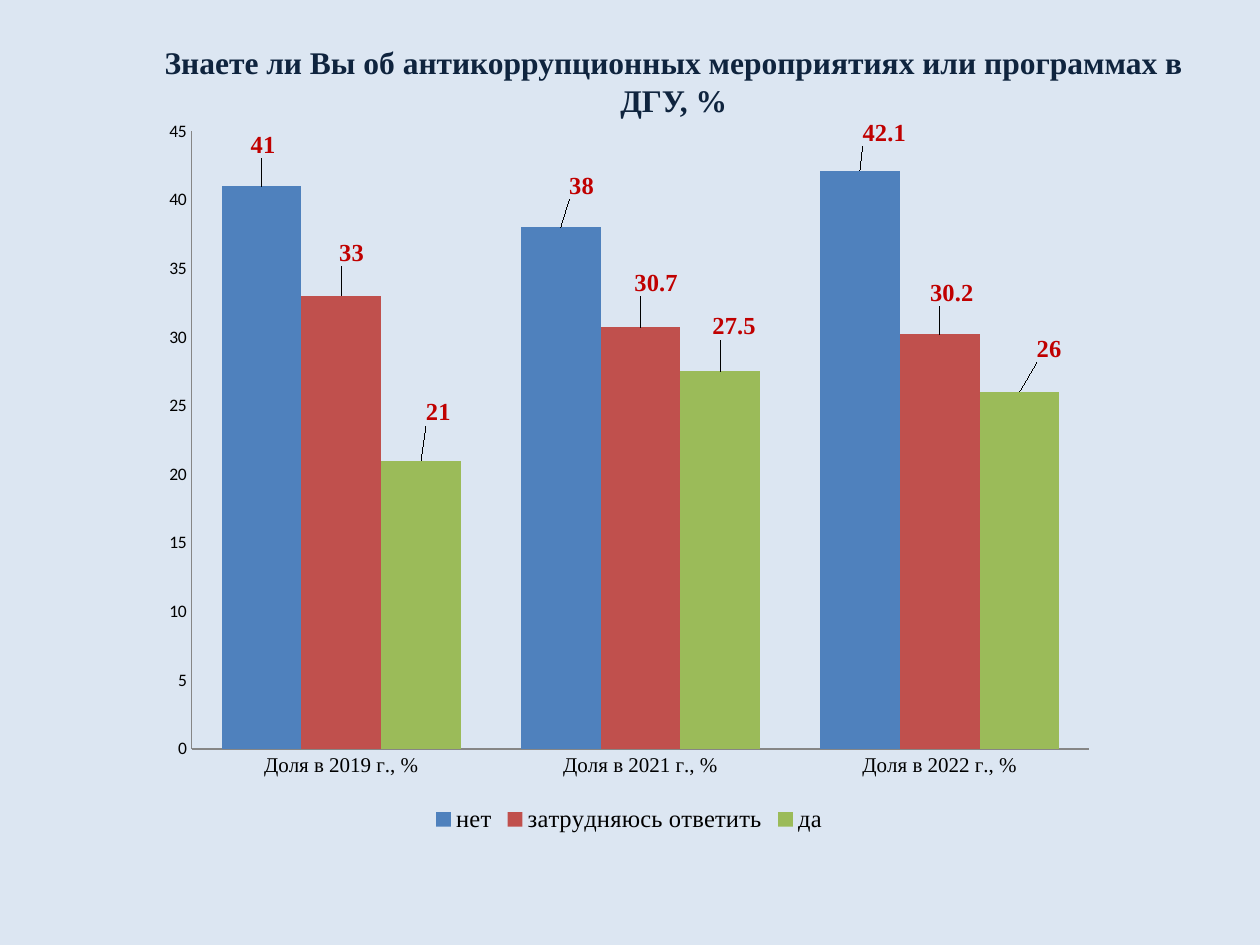
from lxml import etree
from pptx import Presentation
from pptx.chart.data import CategoryChartData
from pptx.dml.color import RGBColor
from pptx.enum.chart import XL_CHART_TYPE, XL_LABEL_POSITION, XL_LEGEND_POSITION, XL_TICK_MARK
from pptx.enum.text import MSO_ANCHOR, PP_ALIGN
from pptx.oxml.ns import qn
from pptx.util import Pt

COLUMN = XL_CHART_TYPE.COLUMN_CLUSTERED
OUTSIDE = XL_LABEL_POSITION.OUTSIDE_END
BOTTOM = XL_LEGEND_POSITION.BOTTOM
NONE = XL_TICK_MARK.NONE
CENTER = PP_ALIGN.CENTER
TOP = MSO_ANCHOR.TOP

COLORS = {"back": "DCE6F2", "title": "0F243E", "text": "000000", "axis": "868686",
          "label": "C00000", "no": "4F81BD", "unsure": "C0504D", "yes": "9BBB59"}
SERIF = "Times New Roman"
FONTS = {
    "title": {"name": SERIF, "size": Pt(18), "bold": True},
    "text": {"name": "Calibri", "size": Pt(10), "bold": False},
    "axis": {"name": SERIF, "size": Pt(12), "bold": False},
    "legend": {"name": SERIF, "size": Pt(14), "bold": False},
    "label": {"name": SERIF, "size": Pt(14), "bold": True},
}
YEARS = (2019, 2021, 2022)
SERIES = [
    ("нет", "no", (41, 38, 42.1), ((1, -13), (12, -13), (14, -11))),
    ("затрудняюсь ответить", "unsure", (33, 30.7, 30.2), ((6, -14), (9, -15), (7, -13))),
    ("да", "yes", (21, 27.5, 26), ((10, -17), (8, -15), (17, -14))),
]
CHART = (85.5, 61, 548, 418)
PLOT = (24, 14, 513, 353)


def assign(item, values):
    """Set each attribute of an item from a dict."""
    for key, value in values.items():
        setattr(item, key, value)


class Deck:
    """Hold the style and the current slide."""

    def __init__(self, width, height):
        """Start a deck with one title-only slide."""
        self.prs = Presentation()
        assign(self.prs, {"slide_width": Pt(width), "slide_height": Pt(height)})
        self.slide = self.prs.slides.add_slide(self.prs.slide_layouts[5])
        self.paint(self.slide.background.fill, "back")

    def paint(self, fill, color):
        """Give a fill one solid colour."""
        fill.solid()
        fill.fore_color.rgb = RGBColor.from_string(COLORS[color])

    def style(self, font, kind, color="text"):
        """Format a font by its kind."""
        assign(font, FONTS[kind])
        font.color.rgb = RGBColor.from_string(COLORS[color])

    def title(self, text, box):
        """Place and format the title."""
        shape = self.slide.shapes.title
        assign(shape, dict(zip(("left", "top", "width", "height"), map(Pt, box))))
        frame = shape.text_frame
        assign(frame, {"text": text, "word_wrap": True, "vertical_anchor": TOP})
        line = frame.paragraphs[0]
        line.alignment = CENTER
        self.style(line.runs[0].font, "title", "title")

    def layout(self, node, index, values):
        """Put a manual layout into a chart node."""
        for old in node.findall(qn("c:layout")):
            node.remove(old)
        outer = etree.Element(qn("c:layout"))
        manual = etree.SubElement(outer, qn("c:manualLayout"))
        for key, value in values.items():
            etree.SubElement(manual, qn(f"c:{key}")).set("val", str(value))
        node.insert(index, outer)

    def axis(self, axis, kind):
        """Format one axis."""
        assign(axis, {"has_major_gridlines": False, "major_tick_mark": NONE,
                      "minor_tick_mark": NONE})
        self.style(axis.tick_labels.font, kind)
        self.paint(axis.format.line.fill, "axis")
        axis.format.line.width = Pt(0.75)

    def labels(self, series, shifts):
        """Label each column, moved by its shift."""
        series.data_labels.show_value = True
        self.style(series.data_labels.font, "label", "label")
        for index, shift in enumerate(shifts):
            label = series.points[index].data_label
            self.style(label.font, "label", "label")
            label.position = OUTSIDE
        nodes = series.data_labels._element.findall(qn("c:dLbl"))
        for node, (left, top) in zip(nodes, shifts):
            self.layout(node, 1, {"x": left / CHART[2], "y": top / CHART[3]})

    def chart(self):
        """Add the column chart."""
        data = CategoryChartData()
        data.categories = [f"Доля в {year} г., %" for year in YEARS]
        for name, color, values, shifts in SERIES:
            data.add_series(name, values)
        chart = self.slide.shapes.add_chart(COLUMN, *map(Pt, CHART), data).chart
        assign(chart, {"has_title": False, "has_legend": True})
        self.style(chart.font, "text")
        assign(chart.legend, {"position": BOTTOM, "include_in_layout": False})
        self.style(chart.legend.font, "legend")
        self.axis(chart.category_axis, "axis")
        self.axis(chart.value_axis, "text")
        assign(chart.value_axis, {"minimum_scale": 0, "maximum_scale": 45, "major_unit": 5})
        plot = chart.plots[0]
        assign(plot, {"gap_width": 75, "overlap": 0, "vary_by_categories": False})
        for series, (name, color, values, shifts) in zip(plot.series, SERIES):
            self.paint(series.format.fill, color)
            self.labels(series, shifts)
        left, top, width, height = PLOT
        area = chart._chartSpace.find(".//" + qn("c:plotArea"))
        self.layout(area, 0, {
            "layoutTarget": "inner", "xMode": "edge", "yMode": "edge",
            "x": left / CHART[2], "y": top / CHART[3],
            "w": width / CHART[2], "h": height / CHART[3]})


def main():
    """Build and save the slide."""
    deck = Deck(720, 540)
    deck.chart()
    deck.title("Знаете ли Вы об антикоррупционных мероприятиях или программах в ДГУ, %",
               (70.5, 21, 629, 51))
    deck.prs.save("out.pptx")


if __name__ == "__main__":
    main()
